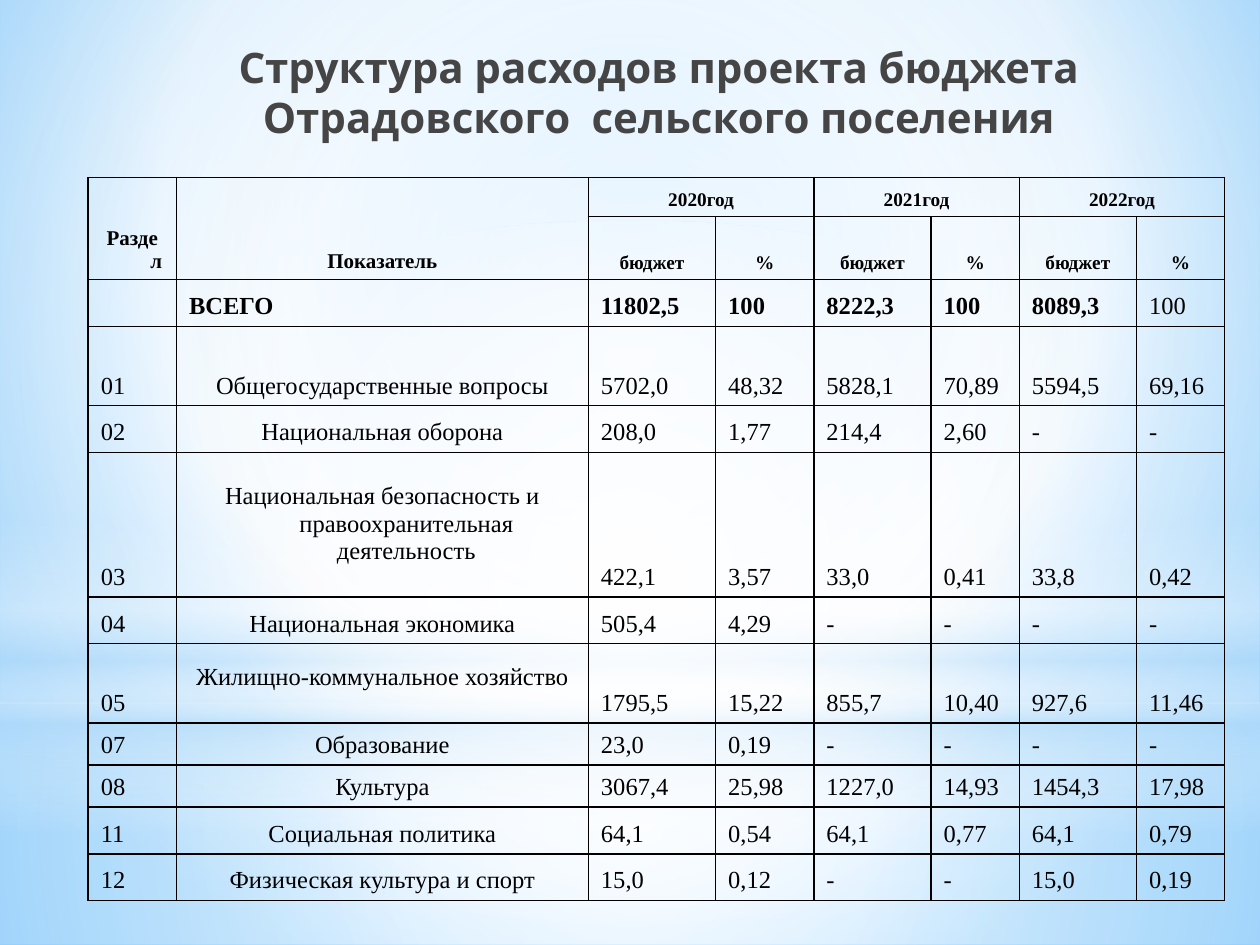
from dataclasses import dataclass

import lxml.etree
import pptx
import pptx.dml.color
import pptx.enum.shapes
import pptx.enum.text
import pptx.oxml.ns
import pptx.util

Inches = pptx.util.Inches
Pt = pptx.util.Pt
qn = pptx.oxml.ns.qn
Shape = pptx.enum.shapes.MSO_SHAPE
Align = pptx.enum.text.PP_ALIGN
Anchor = pptx.enum.text.MSO_ANCHOR

COLORS = {"white": "FFFFFF", "sky": "B4DCFA", "light": "9ED5FF",
          "deep": "5BB9FF", "title": "454545", "black": "000000"}
SERIF = "Times New Roman"
INDENT = 0.38
LINE = 0.21
MIDDLE = (50, 50, 50, 50)


@dataclass
class Stop:
    pos: int
    color: str
    alpha: int = 100


@dataclass
class Glow:
    kind: int
    top: float
    height: float
    stops: list[Stop]
    radial: bool = True


@dataclass
class Style:
    size: int
    bold: bool = False
    center: bool = False
    lift: float = 0


GLOWS = [
    Glow(Shape.RECTANGLE, 5.58, 1.92,
         [Stop(0, "white", 91), Stop(37, "white", 76), Stop(100, "sky", 79)]),
    Glow(Shape.RECTANGLE, 0, 5.58,
         [Stop(0, "white", 89), Stop(48, "white", 62), Stop(100, "sky", 79)]),
    Glow(Shape.RECTANGLE, 4.12, 2.5,
         [Stop(0, "white", 0), Stop(29, "white", 30), Stop(45, "sky", 40),
          Stop(55, "white", 26), Stop(65, "sky", 60), Stop(100, "white", 0)],
         radial=False),
    Glow(Shape.OVAL, 1.75, 5.58, [Stop(0, "white"), Stop(56, "white", 0)]),
]

WIDTHS = [0.7, 3.27, 1.01, 0.78, 0.93, 0.7, 0.93, 0.7]
HEIGHTS = [0.31, 0.5, 0.37, 0.63, 0.37, 1.15, 0.37, 0.63, 0.33, 0.33, 0.37, 0.37]
ROWS = [
    ["Раздел", "Показатель", "2020год", "", "2021год", "", "2022год", ""],
    ["", ""] + ["бюджет", "%"] * 3,
    ["", "ВСЕГО", "11802,5", "100", "8222,3", "100", "8089,3", "100"],
    ["01", "Общегосударственные вопросы",
     "5702,0", "48,32", "5828,1", "70,89", "5594,5", "69,16"],
    ["02", "Национальная оборона", "208,0", "1,77", "214,4", "2,60", "-", "-"],
    ["03", "Национальная безопасность и правоохранительная деятельность",
     "422,1", "3,57", "33,0", "0,41", "33,8", "0,42"],
    ["04", "Национальная экономика", "505,4", "4,29", "-", "-", "-", "-"],
    ["05", "Жилищно-коммунальное хозяйство",
     "1795,5", "15,22", "855,7", "10,40", "927,6", "11,46"],
    ["07", "Образование", "23,0", "0,19", "-", "-", "-", "-"],
    ["08", "Культура", "3067,4", "25,98", "1227,0", "14,93", "1454,3", "17,98"],
    ["11", "Социальная политика", "64,1", "0,54", "64,1", "0,77", "64,1", "0,79"],
    ["12", "Физическая культура и спорт", "15,0", "0,12", "-", "-", "15,0", "0,19"],
]
HEAD, TOTAL = 2, 2
RAISED = ("03", "05")


def add(parent, tag: str, **attrs):
    node = lxml.etree.SubElement(parent, qn(tag))
    for name, value in attrs.items():
        node.set(name, str(value))
    return node


def blend(fill, root, stops: list[Stop], focus: tuple | None) -> None:
    """Give a fill a gradient: radial around focus, or top to bottom without one."""
    fill.gradient()
    grad = root.find(".//" + qn("a:gradFill"))
    for child in list(grad):
        grad.remove(child)
    group = add(grad, "a:gsLst")
    for stop in stops:
        mark = add(group, "a:gs", pos=stop.pos * 1000)
        color = add(mark, "a:srgbClr", val=COLORS[stop.color])
        if stop.alpha < 100:
            add(color, "a:alpha", val=stop.alpha * 1000)
    if focus:
        sides = dict(zip("ltrb", (side * 1000 for side in focus)))
        add(add(grad, "a:path", path="circle"), "a:fillToRect", **sides)
    else:
        add(grad, "a:lin", ang=90 * 60000, scaled=0)


def draw_glow(slide, glow: Glow) -> None:
    shape = slide.shapes.add_shape(glow.kind, 0, Inches(glow.top),
                                   Inches(10), Inches(glow.height))
    shape.shadow.inherit = False
    shape.line.fill.background()
    blend(shape.fill, shape._element, glow.stops, MIDDLE if glow.radial else None)


def set_font(run, name: str, size: int, bold: bool, color: str) -> None:
    run.font.name = name
    run.font.size = Pt(size)
    run.font.bold = bold
    run.font.color.rgb = pptx.dml.color.RGBColor.from_string(COLORS[color])


def draw_title(slide) -> None:
    box = slide.shapes.add_textbox(Inches(0.98), Inches(0.28),
                                   Inches(8.5), Inches(1.25))
    frame = box.text_frame
    frame.word_wrap = True
    frame.text = "Структура расходов проекта бюджета\vОтрадовского  сельского поселения"
    para = frame.paragraphs[0]
    para.alignment = Align.CENTER
    for run in para.runs:
        set_font(run, "Karla", 24, True, "title")


def pick_style(row: int, col: int) -> Style:
    if row < HEAD:
        size = 12 if col < 2 else 11
        return Style(size, bold=True, center=True)
    if row == TOTAL:
        return Style(14, bold=col < len(WIDTHS) - 1)
    raised = col == 1 and ROWS[row][0] in RAISED
    return Style(14, center=col == 1, lift=LINE if raised else 0)


def fill_cell(cell, text: str, style: Style) -> None:
    cell.fill.background()
    cell.vertical_anchor = Anchor.BOTTOM
    cell.margin_bottom = Inches(0.05 + style.lift)
    cell.text_frame.text = text
    para = cell.text_frame.paragraphs[0]
    para.alignment = Align.CENTER if style.center else Align.LEFT
    props = para._p.get_or_add_pPr()
    props.set("marL", str(Inches(INDENT)))
    props.set("indent", str(-Inches(INDENT)))
    for run in para.runs:
        set_font(run, SERIF, style.size, style.bold, "black")
    if not text:
        add(para._p, "a:endParaRPr", sz=style.size * 100)


def frame_cell(cell) -> None:
    props = cell._tc.get_or_add_tcPr()
    for place, side in enumerate(("a:lnL", "a:lnR", "a:lnT", "a:lnB")):
        line = add(props, side, w=Pt(1))
        add(add(line, "a:solidFill"), "a:srgbClr", val=COLORS["black"])
        props.insert(place, line)


def draw_table(slide) -> None:
    table = slide.shapes.add_table(len(ROWS), len(WIDTHS), Inches(0.7), Inches(1.41),
                                   Inches(sum(WIDTHS)), Inches(sum(HEIGHTS))).table
    table.first_row = table.horz_banding = False
    for col, width in zip(table.columns, WIDTHS):
        col.width = Inches(width)
    for row, height in zip(table.rows, HEIGHTS):
        row.height = Inches(height)
    for r, texts in enumerate(ROWS):
        for c, text in enumerate(texts):
            cell = table.cell(r, c)
            fill_cell(cell, text, pick_style(r, c))
            frame_cell(cell)
    for c in (0, 1):
        table.cell(0, c).merge(table.cell(1, c))
    for c in (2, 4, 6):
        table.cell(0, c).merge(table.cell(0, c + 1))


def main() -> None:
    deck = pptx.Presentation()
    deck.slide_width, deck.slide_height = Inches(10), Inches(7.5)
    slide = deck.slides.add_slide(deck.slide_layouts[6])
    blend(slide.background.fill, slide._element,
          [Stop(0, "light"), Stop(60, "white"), Stop(100, "deep")], (20, 10, 20, 60))
    for glow in GLOWS:
        draw_glow(slide, glow)
    draw_title(slide)
    draw_table(slide)
    deck.save("out.pptx")


if __name__ == "__main__":
    main()
